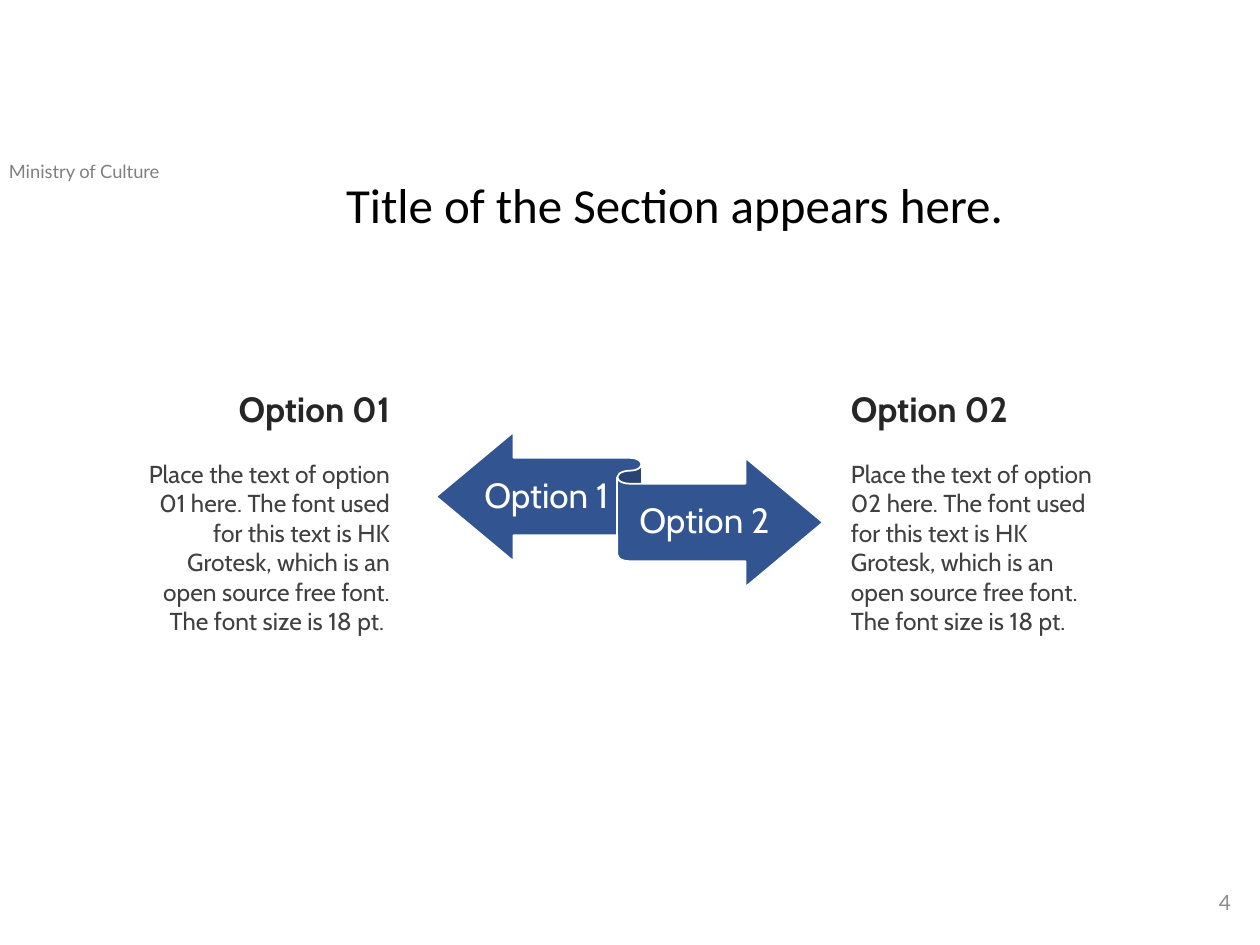
from dataclasses import dataclass

from pptx import Presentation
from pptx.dml.color import RGBColor
from pptx.enum.shapes import MSO_SHAPE
from pptx.enum.text import MSO_ANCHOR, PP_ALIGN
from pptx.util import Emu, Pt

EMU_PER_PX = 914400 / 126


@dataclass(frozen=True)
class Box:
    """A rectangle in px."""
    left: int
    top: int
    width: int
    height: int

    def emu(self) -> tuple[Emu, ...]:
        """Return left, top, width and height in EMU."""
        return tuple(px(n) for n in (self.left, self.top, self.width, self.height))


@dataclass(frozen=True)
class Line:
    """A paragraph with its text style."""
    text: str
    size: float
    font: str
    color: str
    bold: bool = False
    before: int = 0
    spacing: float = 1.0


@dataclass(frozen=True)
class Label:
    """A text box with one or more paragraphs."""
    box: Box
    lines: tuple[Line, ...]
    align: PP_ALIGN = PP_ALIGN.LEFT
    anchor: MSO_ANCHOR = MSO_ANCHOR.TOP
    side_margin: int = 13


def px(value: int) -> Emu:
    """Turn px into EMU."""
    return Emu(round(value * EMU_PER_PX))


def rgb(value: str) -> RGBColor:
    """Turn a hex string into a colour."""
    return RGBColor.from_string(value)


def draw_label(slide, label: Label) -> None:
    """Add a text box and format its paragraphs."""
    text_frame = slide.shapes.add_textbox(*label.box.emu()).text_frame
    text_frame.word_wrap = True
    text_frame.vertical_anchor = label.anchor
    text_frame.margin_left = text_frame.margin_right = px(label.side_margin)
    text_frame.text = "\n".join(line.text for line in label.lines)
    for paragraph, line in zip(text_frame.paragraphs, label.lines):
        paragraph.alignment = label.align
        paragraph.line_spacing = line.spacing
        paragraph.space_before = Pt(line.before)
        for run in paragraph.runs:
            run.font.size = Pt(line.size)
            run.font.name = line.font
            run.font.bold = line.bold
            run.font.color.rgb = rgb(line.color)


def draw_ribbon(slide, box: Box) -> None:
    """Add the two-way ribbon."""
    shape = slide.shapes.add_shape(MSO_SHAPE.LEFT_RIGHT_RIBBON, *box.emu())
    shape.shadow.inherit = False
    shape.fill.solid()
    shape.fill.fore_color.rgb = rgb("325491")
    shape.line.color.rgb = rgb("FFFFFF")
    shape.line.width = Pt(1)


def ribbon_label(text: str, box: Box) -> Label:
    """Describe a caption on the ribbon."""
    line = Line(text, 20, "Cabin", "FFFFFF", spacing=0.9)
    return Label(box, (line,), PP_ALIGN.CENTER, MSO_ANCHOR.MIDDLE, 0)


def option_label(heading: str, body: str, box: Box, align: PP_ALIGN) -> Label:
    """Describe an option heading with its text."""
    lines = (
        Line(heading, 20, "Cabin", "262626", bold=True),
        Line(body, 14, "Cabin", "404040", before=17),
    )
    return Label(box, lines, align)


LABELS = (
    Label(Box(-4, 154, 275, 35), (Line("Ministry of Culture", 10.5, "Lato", "808080"),)),
    ribbon_label("Option 1", Box(483, 459, 127, 76)),
    ribbon_label("Option 2", Box(629, 484, 151, 76)),
    option_label(
        "Option 01",
        "Place the text of option 01 here. The font used for this text is HK Grotesk, "
        "which is an open source free font. The font size is 18 pt. ",
        Box(116, 381, 287, 292),
        PP_ALIGN.RIGHT,
    ),
    option_label(
        "Option 02",
        "Place the text of option 02 here. The font used for this text is HK Grotesk, "
        "which is an open source free font. The font size is 18 pt.",
        Box(838, 381, 278, 292),
        PP_ALIGN.LEFT,
    ),
    Label(
        Box(960, 877, 284, 50),
        (Line("4", 12, "Lato", "8C8C8C"),),
        PP_ALIGN.RIGHT,
        MSO_ANCHOR.MIDDLE,
    ),
    Label(
        Box(333, 175, 714, 100),
        (Line("Title of the Section appears here.", 28, "Calibri", "000000", spacing=0.9),),
    ),
)


def main() -> None:
    """Build and save the slide."""
    presentation = Presentation()
    presentation.slide_width = px(1260)
    presentation.slide_height = px(945)
    slide = presentation.slides.add_slide(presentation.slide_layouts[6])
    draw_ribbon(slide, Box(436, 432, 387, 155))
    for label in LABELS:
        draw_label(slide, label)
    presentation.save("out.pptx")


if __name__ == "__main__":
    main()
